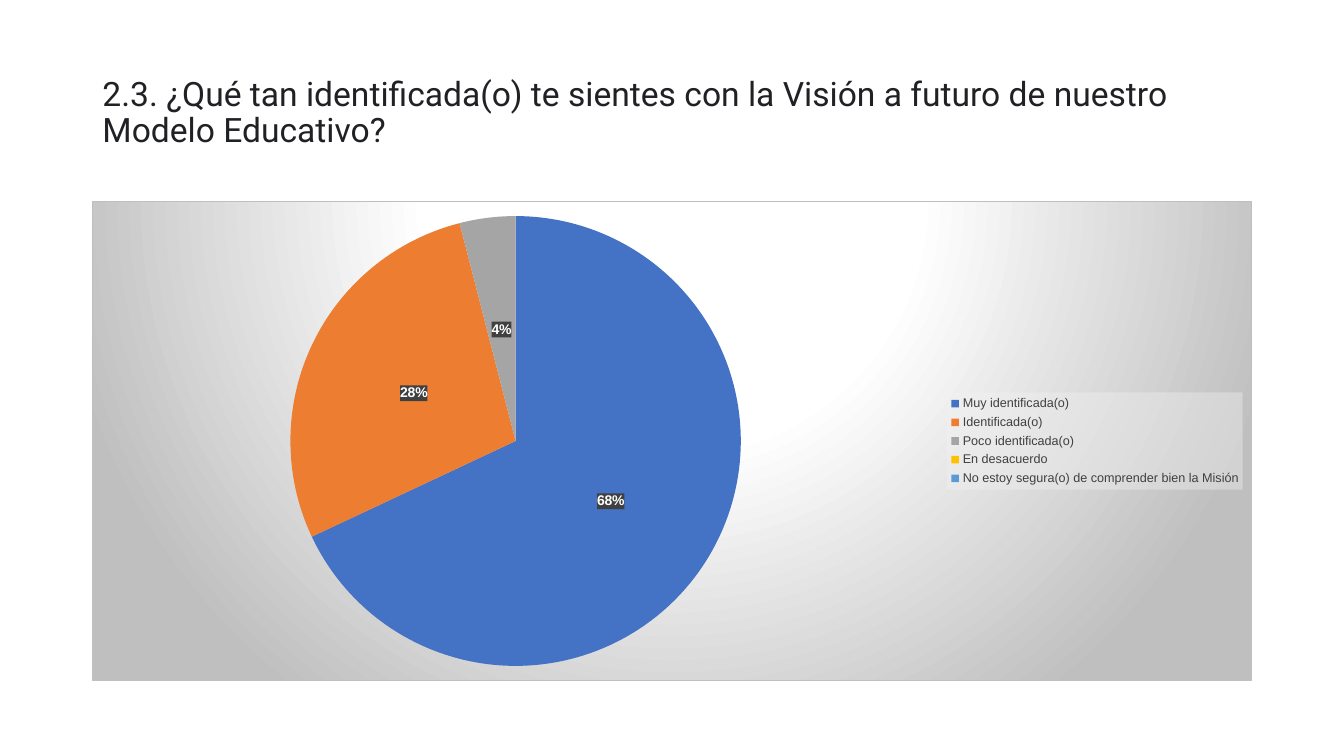
"""Build the survey slide on identification with the Visión."""
from dataclasses import dataclass

from lxml import etree
from pptx import Presentation
from pptx import util as u
from pptx.chart.data import CategoryChartData
from pptx.dml.color import RGBColor
from pptx.enum import chart as ch, text
from pptx.oxml import parse_xml
from pptx.oxml.ns import nsdecls, qn


@dataclass(frozen=True)
class Theme:
    """Colours, fonts and type sizes."""
    heading_font: str = "Roboto"
    chart_font: str = "Arial"
    heading: str = "202124"
    chart_text: str = "000000"
    legend_text: str = "404040"
    label_text: str = "FFFFFF"
    label_fill: str = "404040"
    legend_fill: str = "F2F2F2"
    glow: str = "FFFFFF"
    edge: str = "BFBFBF"
    slices: tuple = ("4472C4", "ED7D31", "A5A5A5", "FFC000", "5B9BD5")
    heading_size: float = 24
    chart_size: float = 10
    legend_size: float = 9


def apply(target, values):
    """Set each attribute named in a dict."""
    for name, value in values.items():
        setattr(target, name, value)


def style_font(font, face, size, colour, bold=False):
    """Give a font its face, size, colour and weight."""
    apply(font, {"name": face, "size": u.Pt(size), "bold": bold})
    font.color.rgb = RGBColor.from_string(colour)


def chart_fill(inner):
    """Return a chart shape-properties element."""
    return parse_xml(f'<c:spPr {nsdecls("c", "a")}>{inner}</c:spPr>')


def solid(colour, alpha):
    """Return a translucent solid fill, alpha in percent."""
    return (f'<a:solidFill><a:srgbClr val="{colour}">'
            f'<a:alpha val="{alpha * 1000}"/></a:srgbClr></a:solidFill>')


class SlideBuilder:
    """Holds the theme and the current slide."""

    def __init__(self, deck, theme):
        """Add a title-only slide."""
        self.theme = theme
        self.slide = deck.slides.add_slide(deck.slide_layouts[5])

    def title(self, wording, left, top, width, height):
        """Place and format the title placeholder."""
        heading = self.slide.shapes.title
        apply(heading, {"left": u.Pt(left), "top": u.Pt(top),
                        "width": u.Pt(width), "height": u.Pt(height)})
        frame = heading.text_frame
        apply(frame, {
            "text": wording, "word_wrap": True,
            "auto_size": text.MSO_AUTO_SIZE.NONE,
            "vertical_anchor": text.MSO_ANCHOR.MIDDLE,
            "margin_left": u.Pt(7.2), "margin_right": u.Pt(7.2),
            "margin_top": u.Pt(3.6), "margin_bottom": u.Pt(3.6)})
        line = frame.paragraphs[0]
        apply(line, {"alignment": text.PP_ALIGN.LEFT, "line_spacing": 0.9})
        style_font(line.runs[0].font, self.theme.heading_font,
                   self.theme.heading_size, self.theme.heading)

    def pie(self, answers, plot_box, left, top, width, height):
        """Add the pie chart of answers with its legend and labels."""
        theme = self.theme
        survey = CategoryChartData()
        survey.categories = list(answers)
        survey.add_series("Series 1", list(answers.values()))
        chart = self.slide.shapes.add_chart(
            ch.XL_CHART_TYPE.PIE, u.Pt(left), u.Pt(top),
            u.Pt(width), u.Pt(height), survey).chart
        apply(chart, {"has_title": False, "has_legend": True})
        style_font(chart.font, theme.chart_font, theme.chart_size,
                   theme.chart_text)
        plot = chart.plots[0]
        plot.vary_by_categories = True
        for index, colour in enumerate(theme.slices):
            fill = plot.series[0].points[index].format.fill
            fill.solid()
            fill.fore_color.rgb = RGBColor.from_string(colour)
        self.legend(chart.legend)
        self.labels(plot.series[0].data_labels, answers.values())
        self.backdrop(chart)
        self.place_plot(chart, plot_box)

    def legend(self, legend):
        """Format the legend on a translucent panel."""
        theme = self.theme
        apply(legend, {"position": ch.XL_LEGEND_POSITION.RIGHT,
                       "include_in_layout": False})
        style_font(legend.font, theme.chart_font, theme.legend_size,
                   theme.legend_text)
        legend.font._element.getparent().getparent().getparent().addprevious(
            chart_fill(solid(theme.legend_fill, 39)))

    def labels(self, labels, values):
        """Show percentages on dark boxes and drop the empty answers."""
        theme = self.theme
        apply(labels, {"show_percentage": True, "show_value": False,
                       "number_format": "0%",
                       "number_format_is_linked": False,
                       "position": ch.XL_LABEL_POSITION.CENTER})
        style_font(labels.font, theme.chart_font, theme.chart_size,
                   theme.label_text, True)
        holder = labels._element
        holder.find(qn("c:txPr")).addprevious(
            chart_fill(solid(theme.label_fill, 90)))
        empty = [i for i, value in enumerate(values) if not value]
        for place, index in enumerate(empty):
            holder.insert(place, parse_xml(
                f'<c:dLbl {nsdecls("c")}><c:idx val="{index}"/>'
                '<c:delete val="1"/></c:dLbl>'))

    def backdrop(self, chart):
        """Fill the chart area with a round gradient and a thin border."""
        theme = self.theme
        stops = "".join(
            f'<a:gs pos="{at * 1000}"><a:srgbClr val="{colour}"/></a:gs>'
            for at, colour in ((0, theme.glow), (39, theme.glow),
                               (100, theme.edge)))
        body = chart._chartSpace.find(qn("c:chart"))
        body.addprevious(parse_xml(
            f'<c:roundedCorners {nsdecls("c")} val="0"/>'))
        body.addnext(chart_fill(
            f'<a:gradFill><a:gsLst>{stops}</a:gsLst><a:path path="circle">'
            '<a:fillToRect l="50000" t="-80000" r="50000" b="180000"/>'
            f'</a:path></a:gradFill><a:ln w="{u.Pt(0.75)}"><a:solidFill>'
            f'<a:srgbClr val="{theme.edge}"/></a:solidFill></a:ln>'))

    def place_plot(self, chart, plot_box):
        """Fix the plot area as fractions of the chart."""
        area = chart._chartSpace.find(qn("c:chart")).find(qn("c:plotArea"))
        for old in area.findall(qn("c:layout")):
            area.remove(old)
        layout = etree.Element(qn("c:layout"))
        manual = etree.SubElement(layout, qn("c:manualLayout"))
        settings = {"layoutTarget": "inner", "xMode": "edge",
                    "yMode": "edge", **plot_box}
        for name, value in settings.items():
            etree.SubElement(manual, qn(f"c:{name}")).set("val", str(value))
        area.insert(0, layout)


def main():
    """Build and save the slide."""
    deck = Presentation()
    apply(deck, {"slide_width": u.Pt(960), "slide_height": u.Pt(540)})
    builder = SlideBuilder(deck, Theme())
    builder.title("2.3. ¿Qué tan identificada(o) te sientes con la Visión a "
                  "futuro de nuestro Modelo Educativo?",
                  66, 28.75, 828, 104.4)
    answers = {
        "Muy identificada(o)": 68,
        "Identificada(o)": 28,
        "Poco identificada(o)": 4,
        "En desacuerdo": 0,
        "No estoy segura(o) de comprender bien la Misión": 0,
    }
    plot_box = {"x": 0.17, "y": 0.03, "w": 0.39, "h": 0.94}
    builder.pie(answers, plot_box, 66, 143.75, 828, 342.6)
    deck.save("out.pptx")


if __name__ == "__main__":
    main()
